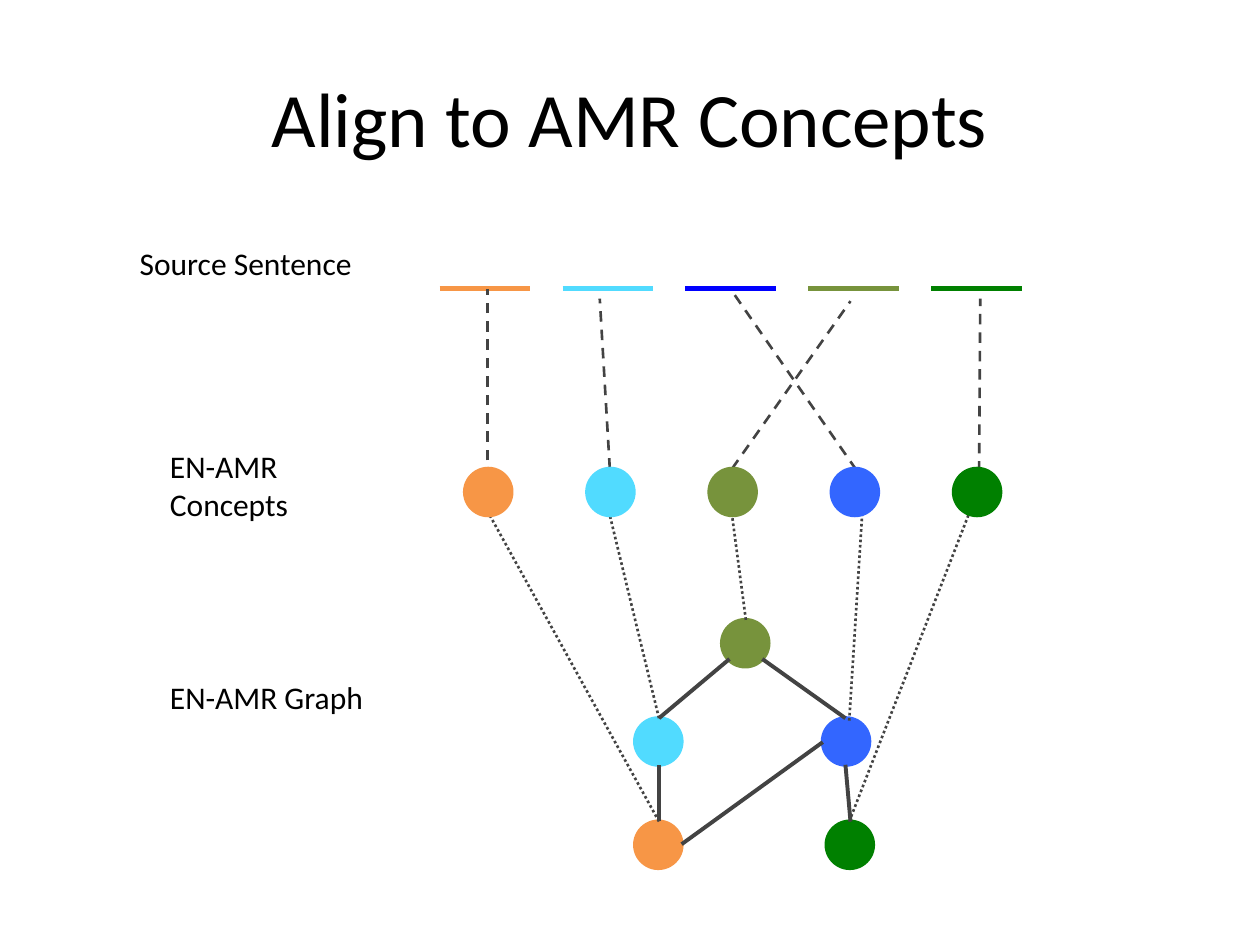
from dataclasses import dataclass

from lxml.etree import SubElement
from pptx import Presentation
from pptx.dml.color import RGBColor
from pptx.enum.dml import MSO_LINE
from pptx.enum.shapes import MSO_CONNECTOR, MSO_SHAPE
from pptx.enum.text import MSO_ANCHOR, PP_ALIGN
from pptx.oxml.ns import qn
from pptx.util import Inches, Pt


@dataclass(frozen=True)
class Theme:
    font: str = "Calibri"
    title_size: float = 44
    label_size: float = 18
    text: str = "000000"
    edge: str = "434343"
    orange: str = "F79646"
    cyan: str = "51DBFF"
    word_blue: str = "0000FF"
    blue: str = "3366FF"
    olive: str = "77933C"
    green: str = "008000"
    word_width: float = 3
    edge_width: float = 2.25
    link_width: float = 1.5
    node_size: float = 0.37


class DiagramSlide:
    """Draws the parts of an alignment diagram on one slide."""

    def __init__(self, slide, theme):
        self.shapes = slide.shapes
        self.theme = theme

    def text(self, wording, left, top, width, height, size,
             align=PP_ALIGN.LEFT, anchor=MSO_ANCHOR.TOP):
        box = self.shapes.add_textbox(Inches(left), Inches(top), Inches(width), Inches(height))
        frame = box.text_frame
        frame.word_wrap = True
        frame.vertical_anchor = anchor
        frame.margin_left = frame.margin_right = Inches(0.1)
        frame.margin_top = frame.margin_bottom = Inches(0.1)
        frame.text = wording
        paragraph = frame.paragraphs[0]
        paragraph.alignment = align
        font = paragraph.runs[0].font
        font.name = self.theme.font
        font.size = Pt(size)
        font.color.rgb = RGBColor.from_string(self.theme.text)

    def node(self, left, top, color):
        size = Inches(self.theme.node_size)
        shape = self.shapes.add_shape(MSO_SHAPE.OVAL, Inches(left), Inches(top), size, size)
        shape.shadow.inherit = False
        shape.fill.solid()
        shape.fill.fore_color.rgb = RGBColor.from_string(color)
        shape.line.color.rgb = RGBColor.from_string(color)
        shape.line.width = Pt(self.theme.edge_width)

    def line(self, start, end, color, width, dash=None):
        points = [Inches(value) for value in (*start, *end)]
        connector = self.shapes.add_connector(MSO_CONNECTOR.STRAIGHT, *points)
        connector.line.color.rgb = RGBColor.from_string(color)
        connector.line.width = Pt(width)
        if dash is not None:
            connector.line.dash_style = dash
        SubElement(connector._element.spPr, qn("a:effectLst"))


def main():
    theme = Theme()
    presentation = Presentation()
    presentation.slide_width = Inches(10)
    presentation.slide_height = Inches(7.5)
    slide = presentation.slides.add_slide(presentation.slide_layouts[6])
    diagram = DiagramSlide(slide, theme)

    word_colors = (theme.orange, theme.cyan, theme.word_blue, theme.olive, theme.green)
    for index, color in enumerate(word_colors):
        left = 3.49 + 0.975 * index
        diagram.line((left, 2.29), (left + 0.72, 2.29), color, theme.word_width)

    graph_nodes = (
        (5.04, 5.7, theme.cyan),
        (5.73, 4.92, theme.olive),
        (5.04, 6.52, theme.orange),
        (6.53, 5.7, theme.blue),
        (6.56, 6.52, theme.green),
    )
    for left, top, color in graph_nodes:
        diagram.node(left, top, color)

    graph_edges = (
        ((5.23, 5.7), (5.79, 5.23)),
        ((5.23, 6.52), (5.23, 6.07)),
        ((6.05, 5.23), (6.71, 5.7)),
        ((6.75, 6.52), (6.71, 6.07)),
        ((6.53, 5.89), (5.41, 6.7)),
    )
    for start, end in graph_edges:
        diagram.line(start, end, theme.edge, theme.edge_width)

    graph_links = (
        ((5.92, 4.92), (5.81, 4.09)),
        ((5.23, 5.7), (4.84, 4.09)),
        ((5.23, 6.52), (3.81, 3.95)),
        ((6.74, 5.72), (6.85, 3.96)),
        ((6.74, 6.52), (7.74, 3.95)),
    )
    word_links = (
        ((3.87, 3.8), (3.87, 2.29)),
        ((4.84, 3.72), (4.76, 2.37)),
        ((5.81, 3.72), (6.75, 2.39)),
        ((6.88, 3.85), (5.83, 2.34)),
        ((7.77, 3.89), (7.78, 2.37)),
    )
    for links, dash in ((graph_links, MSO_LINE.ROUND_DOT), (word_links, MSO_LINE.DASH)):
        for start, end in links:
            diagram.line(start, end, theme.edge, theme.link_width, dash)

    concept_colors = (theme.orange, theme.cyan, theme.olive, theme.blue, theme.green)
    for index, color in enumerate(concept_colors):
        diagram.node(3.69 + 0.97 * index, 3.72, color)

    diagram.text("Align to AMR Concepts", 0.5, 0.3, 9, 1.25, theme.title_size,
                 PP_ALIGN.CENTER, MSO_ANCHOR.MIDDLE)
    labels = (
        ("Source Sentence", 1.01, 1.84, 1.99, 0.69),
        ("EN-AMR Concepts", 1.25, 3.45, 1.92, 0.9),
        ("EN-AMR Graph", 1.25, 5.28, 2.29, 0.9),
    )
    for label in labels:
        diagram.text(*label, theme.label_size)

    presentation.save("out.pptx")


if __name__ == "__main__":
    main()
